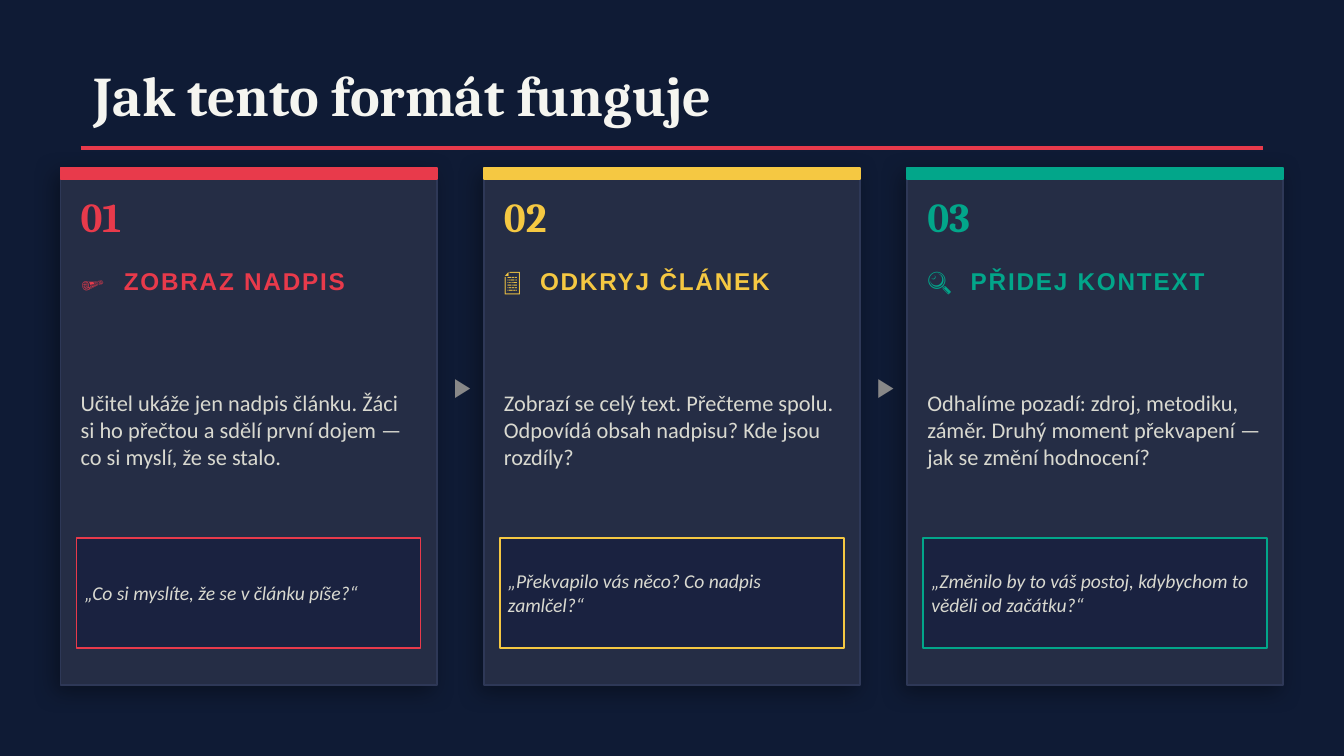
from lxml.etree import SubElement
from pptx import Presentation
from pptx.dml.color import RGBColor
from pptx.enum.shapes import MSO_CONNECTOR as Connector, MSO_SHAPE as Shape
from pptx.enum.text import MSO_ANCHOR as Anchor, PP_ALIGN as Align
from pptx.oxml.ns import qn
from pptx.util import Inches, Pt

# Content
TITLE = "Jak tento formát funguje"
ARROW = "▶"
STEPS = [
    {"number": "01", "icon": "🗞️", "heading": "ZOBRAZ NADPIS", "accent": "red",
     "body": "Učitel ukáže jen nadpis článku. Žáci si ho přečtou a sdělí první dojem — "
             "co si myslí, že se stalo.",
     "question": "„Co si myslíte, že se v článku píše?“"},
    {"number": "02", "icon": "📄", "heading": "ODKRYJ ČLÁNEK", "accent": "yellow",
     "body": "Zobrazí se celý text. Přečteme spolu. Odpovídá obsah nadpisu? Kde jsou rozdíly?",
     "question": "„Překvapilo vás něco? Co nadpis zamlčel?“"},
    {"number": "03", "icon": "🔍", "heading": "PŘIDEJ KONTEXT", "accent": "green",
     "body": "Odhalíme pozadí: zdroj, metodiku, záměr. Druhý moment překvapení — "
             "jak se změní hodnocení?",
     "question": "„Změnilo by to váš postoj, kdybychom to věděli od začátku?“"},
]

THEME = {
    "colors": {"background": "0F1B35", "title": "F5F5F0", "card": "252D45",
               "card_line": "2E3857", "question": "1A2240", "text": "D9D9D0",
               "arrow": "888888", "shadow": "000000",
               "red": "E83A4B", "yellow": "F5C842", "green": "02A68A"},
    "sizes": {"title": 30, "number": 22, "heading": 13, "body": 12,
              "question": 10.5, "arrow": 14},
    "fonts": {"title": "Cambria", "heading": "Arial", "body": "Calibri"},
}

# Slide (16:9) and card grid
SLIDE_WIDTH = 10
SLIDE_HEIGHT = SLIDE_WIDTH * 9 / 16
CARD_LEFT, CARD_TOP, CARD_WIDTH, CARD_HEIGHT = 0.45, 1.25, 2.8, 3.85
CARD_PITCH = 3.15
PADDING = 0.15
QUESTION_INSET = 0.12
QUESTION_PADDING = 0.06
ICON_GAP = 5.6  # letter spacing of the space after an icon, in points


def color(name):
    return RGBColor.from_string(THEME["colors"][name])


def add_text(slide, box, text, *, size, ink, font="body", bold=False, italic=False,
             align=Align.LEFT, inset=0):
    """Text is a string, or a list of (string, letter spacing in points)."""
    shape = slide.shapes.add_textbox(*map(Inches, box))
    frame = shape.text_frame
    frame.word_wrap = True
    frame.vertical_anchor = Anchor.MIDDLE
    frame.margin_left = frame.margin_right = Inches(inset)
    frame.margin_top = frame.margin_bottom = Inches(inset / 2)
    paragraph = frame.paragraphs[0]
    paragraph.alignment = align
    for string, spacing in [(text, 0)] if isinstance(text, str) else text:
        run = paragraph.add_run()
        run.text = string
        run.font.name = THEME["fonts"][font]
        run.font.size = Pt(THEME["sizes"][size])
        run.font.bold = bold
        run.font.italic = italic
        run.font.color.rgb = color(ink)
        if spacing:
            run.font._element.set("spc", str(round(spacing * 100)))


def add_box(slide, box, fill, line):
    shape = slide.shapes.add_shape(Shape.RECTANGLE, *map(Inches, box))
    shape.shadow.inherit = False
    shape.fill.solid()
    shape.fill.fore_color.rgb = color(fill)
    shape.line.color.rgb = color(line)
    shape.line.width = Pt(1)
    return shape


def add_shadow(shape):
    effects = shape._element.spPr.find(qn("a:effectLst"))
    shadow = SubElement(effects, qn("a:outerShdw"), blurRad=str(Pt(12)), dist=str(Pt(4)),
                        dir=str(135 * 60000), algn="bl", rotWithShape="0")
    tint = SubElement(shadow, qn("a:srgbClr"), val=THEME["colors"]["shadow"])
    SubElement(tint, qn("a:alpha"), val="35000")


def add_title(slide):
    add_text(slide, (0.6, 0.35, 8.8, 0.7), TITLE, size="title", ink="title",
             font="title", bold=True, inset=0.1)
    rule = slide.shapes.add_connector(Connector.STRAIGHT, Inches(0.6), Inches(1.1),
                                      Inches(9.4), Inches(1.1))
    rule.line.color.rgb = color("red")
    rule.line.width = Pt(2)
    SubElement(rule._element.spPr, qn("a:effectLst"))


def add_card(slide, left, step):
    accent = step["accent"]
    inner_left, inner_width = left + PADDING, CARD_WIDTH - 2 * PADDING

    # Panel with accent bar
    add_shadow(add_box(slide, (left, CARD_TOP, CARD_WIDTH, CARD_HEIGHT), "card", "card_line"))
    add_box(slide, (left, CARD_TOP, CARD_WIDTH, 0.08), accent, accent)

    # Number, heading and body
    add_text(slide, (inner_left, 1.38, 0.6, 0.45), step["number"], size="number",
             ink=accent, font="title", bold=True)
    heading = [(step["icon"], 1), (" ", ICON_GAP), (step["heading"], 1)]
    add_text(slide, (inner_left, 1.88, inner_width, 0.42), heading, size="heading",
             ink=accent, font="heading", bold=True)
    add_text(slide, (inner_left, 2.42, inner_width, 1.55), step["body"], size="body", ink="text")

    # Question box
    question_left, question_width = left + QUESTION_INSET, CARD_WIDTH - 2 * QUESTION_INSET
    add_box(slide, (question_left, 4, question_width, 0.82), "question", accent)
    add_text(slide, (question_left + QUESTION_PADDING, 4.02,
                     question_width - 2 * QUESTION_PADDING, 0.78),
             step["question"], size="question", ink="text", italic=True)


def main():
    presentation = Presentation()
    presentation.slide_width = Inches(SLIDE_WIDTH)
    presentation.slide_height = Inches(SLIDE_HEIGHT)
    slide = presentation.slides.add_slide(presentation.slide_layouts[6])
    slide.background.fill.solid()
    slide.background.fill.fore_color.rgb = color("background")

    add_title(slide)
    lefts = [CARD_LEFT + index * CARD_PITCH for index in range(len(STEPS))]
    for left, step in zip(lefts, STEPS):
        add_card(slide, left, step)

    # Arrows between cards
    for left in lefts[:-1]:
        add_text(slide, (left + CARD_WIDTH + 0.06, 2.7, 0.26, 0.35), ARROW, size="arrow",
                 ink="arrow", align=Align.CENTER)
    presentation.save("out.pptx")


if __name__ == "__main__":
    main()
